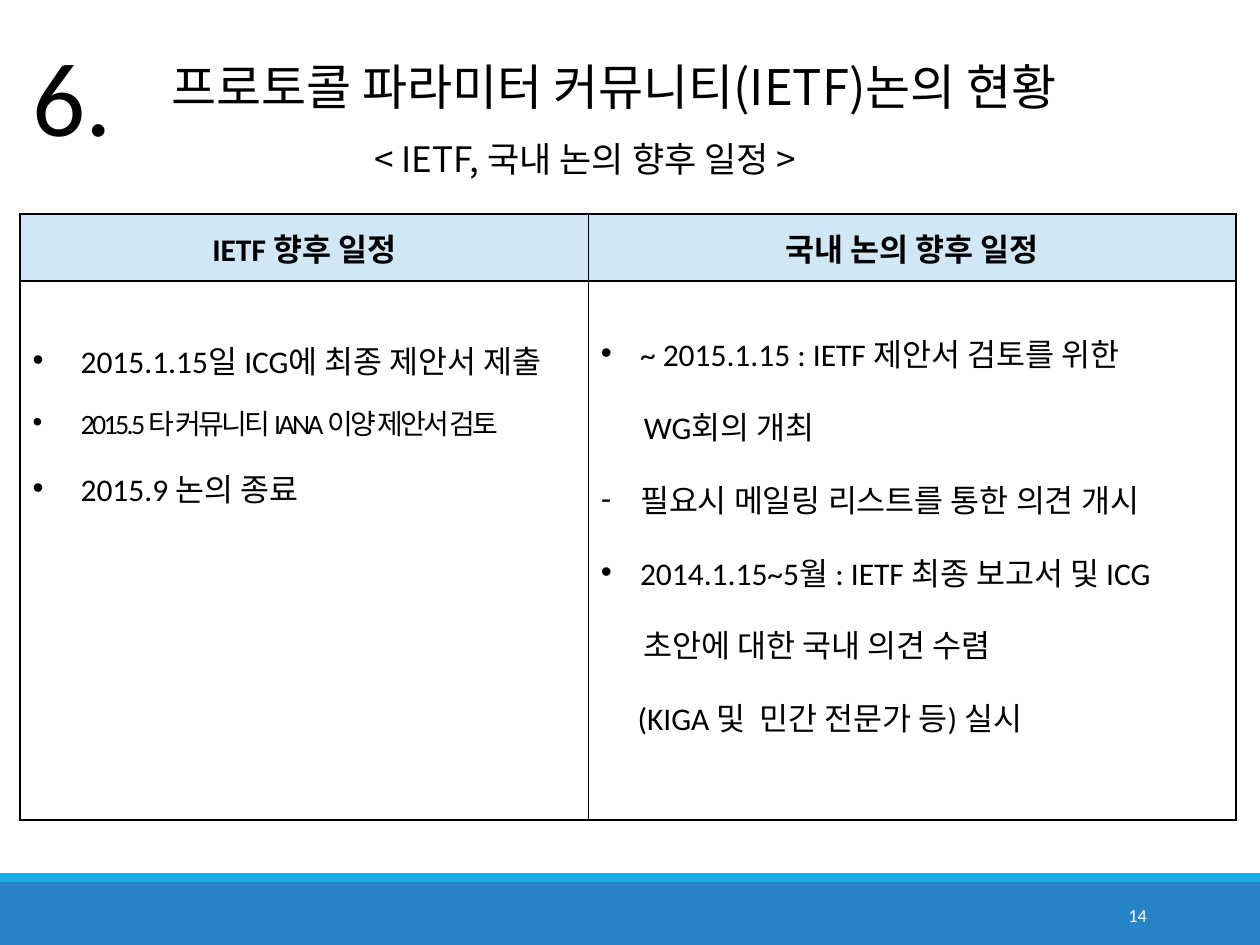
from lxml.etree import SubElement
from pptx import Presentation
from pptx.dml.color import RGBColor
from pptx.enum.shapes import MSO_SHAPE as Shape
from pptx.enum.text import MSO_ANCHOR as Anchor, PP_ALIGN as Align
from pptx.oxml import parse_xml
from pptx.oxml.ns import nsdecls, qn
from pptx.util import Inches, Pt

COLORS = {"text": "000000", "white": "FFFFFF", "header": "D1E7F6",
          "band": "2683C6", "stripe": "1CADE4"}
LATIN, KOREAN = "Calibri", "Noto Sans CJK KR"

HEADERS = [[("IETF ", LATIN), ("향후 일정", "Arial")],
           [("국내 논의 향후 일정", "Arial")]]
IETF_PLAN = [("•", 0.38, "2015.1.15일 ICG에 최종 제안서 제출", 18, 0),
             ("•", 0.38, "2015.5 타 커뮤니티 IANA 이양 제안서 검토", 16, -1.5),
             ("•", 0.38, "2015.9 논의 종료", 18, 0)]
DOMESTIC_PLAN = [("•", 0.31, "~ 2015.1.15 : IETF 제안서 검토를 위한", 18, 0),
                 (None, 0.34, "WG회의 개최", 18, 0),
                 ("-", 0.31, "필요시 메일링 리스트를 통한 의견 개시", 18, 0),
                 ("•", 0.31, "2014.1.15~5월 : IETF 최종 보고서 및 ICG", 18, 0),
                 (None, 0.34, "초안에 대한 국내 의견 수렴", 18, 0),
                 (None, 0.29, "(KIGA 및  민간 전문가 등) 실시", 18, 0)]


def color(name):
    return RGBColor.from_string(COLORS[name])


def format_run(run, size, font=LATIN, ink="text", bold=False, spacing=0):
    run.font.size = Pt(size)
    run.font.bold = bold
    run.font.color.rgb = color(ink)
    run.font.name = font
    properties = run.font._element
    SubElement(properties, qn("a:ea")).set("typeface", KOREAN)
    if spacing:
        properties.set("spc", str(int(spacing * 100)))


def add_label(slide, box, text, size, font=LATIN, ink="text", wrap=True,
              align=Align.LEFT, anchor=Anchor.TOP, line_spacing=1.0):
    frame = slide.shapes.add_textbox(*map(Inches, box)).text_frame
    frame.word_wrap = wrap
    frame.vertical_anchor = anchor
    frame.text = text
    paragraph = frame.paragraphs[0]
    paragraph.alignment = align
    paragraph.line_spacing = line_spacing
    format_run(paragraph.runs[0], size, font, ink)


def add_heading(slide, left, top):
    add_label(slide, (left, top, 0.87, 1.11), "6.", 60)
    add_label(slide, (left + 1.1, top + 0.27, 8.7, 0.57),
              "프로토콜 파라미터 커뮤니티(IETF)논의 현황", 28, KOREAN, line_spacing=0.85)
    add_label(slide, (left + 2.71, top + 0.89, 3.98, 0.44),
              "< IETF, 국내 논의 향후 일정 >", 20, KOREAN, wrap=False, line_spacing=0.85)


def add_borders(cell):
    properties = cell._tc.get_or_add_tcPr()
    for index, side in enumerate(("lnL", "lnR", "lnT", "lnB")):
        properties.insert(index, parse_xml(
            f'<a:{side} {nsdecls("a")} w="12700"><a:solidFill>'
            f'<a:srgbClr val="{COLORS["text"]}"/></a:solidFill></a:{side}>'))


def fill_header(cell, parts):
    cell.fill.solid()
    cell.fill.fore_color.rgb = color("header")
    cell.vertical_anchor = Anchor.MIDDLE
    paragraph = cell.text_frame.paragraphs[0]
    paragraph.alignment = Align.CENTER
    for text, font in parts:
        run = paragraph.add_run()
        run.text = text
        format_run(run, 18, font, bold=True)


def fill_plan(cell, items, line_spacing, align, margin_top):
    cell.fill.background()
    cell.vertical_anchor = Anchor.TOP
    cell.margin_top = Inches(margin_top)
    frame = cell.text_frame
    frame.text = "\n".join(item[2] for item in items)
    for paragraph, (bullet, indent, _, size, spacing) in zip(frame.paragraphs, items):
        properties = paragraph._p.get_or_add_pPr()
        properties.set("marL", str(Inches(indent)))
        if bullet:
            properties.set("indent", str(-Inches(indent)))
            SubElement(properties, qn("a:buFont")).set("typeface", "Arial")
            SubElement(properties, qn("a:buChar")).set("char", bullet)
        paragraph.alignment = align
        paragraph.line_spacing = line_spacing
        format_run(paragraph.runs[0], size, spacing=spacing)


def add_schedule(slide, left, top, widths, heights):
    box = map(Inches, (left, top, sum(widths), sum(heights)))
    table = slide.shapes.add_table(len(heights), len(widths), *box).table
    table.horz_banding = False
    for column, width in zip(table.columns, widths):
        column.width = Inches(width)
    for row, height in zip(table.rows, heights):
        row.height = Inches(height)
    for index, parts in enumerate(HEADERS):
        fill_header(table.cell(0, index), parts)
    fill_plan(table.cell(1, 0), IETF_PLAN, 1.5, Align.LEFT, 0.26)
    fill_plan(table.cell(1, 1), DOMESTIC_PLAN, 1.6, Align.JUSTIFY, 0.17)
    for cell in table.iter_cells():
        add_borders(cell)


def add_footer(slide, top, width, height):
    stripe = 0.07
    for name, offset, depth in (("band", stripe, height - stripe), ("stripe", 0, stripe)):
        bar = slide.shapes.add_shape(Shape.RECTANGLE, 0, Inches(top + offset),
                                     Inches(width), Inches(depth))
        bar.shadow.inherit = False
        bar.fill.solid()
        bar.fill.fore_color.rgb = color(name)
        bar.line.fill.background()
    add_label(slide, (width - 1.88, top + 0.13, 1.08, 0.4), "14", 10.5, ink="white",
              align=Align.RIGHT, anchor=Anchor.MIDDLE)


def main():
    presentation = Presentation()
    presentation.slide_width = Inches(10)
    presentation.slide_height = Inches(7.5)
    slide = presentation.slides.add_slide(presentation.slide_layouts[6])
    add_footer(slide, 6.93, 10, 0.57)
    add_schedule(slide, 0.16, 1.7, (4.51, 5.14), (0.53, 4.28))
    add_heading(slide, 0.16, 0.2)
    presentation.save("out.pptx")


if __name__ == "__main__":
    main()
